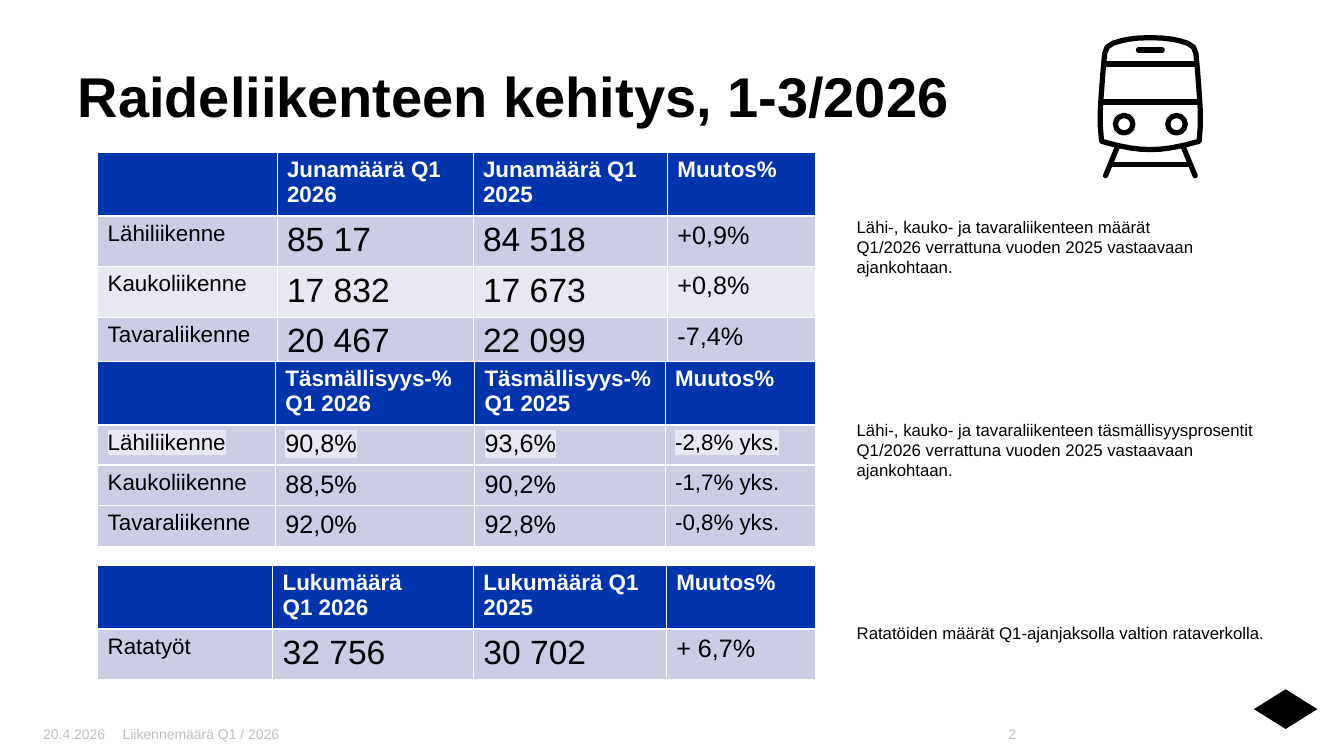
from pptx import Presentation
from pptx.dml.color import RGBColor
from pptx.enum.shapes import MSO_CONNECTOR as Link, MSO_SHAPE as Shape
from pptx.enum.text import MSO_ANCHOR as Anchor, PP_ALIGN as Align
from pptx.oxml.ns import qn
from pptx.util import Cm, Pt
from lxml.etree import SubElement as Sub

HUES = {"ink": "000000", "white": "FFFFFF", "head": "0034AC",
        "band": "CBCDE3", "pale": "E7E8F1", "foot": "BFBFBF"}
FACE = "Arial"

TABLES = [
    {"top": 3.84, "cols": (4.52, 4.94, 4.9, 3.74), "rows": (1.48, 1.2),
     "sizes": (16, 24, 24, 18), "thick": (0,), "pale": (2,), "mark": (),
     "data": [("", "Junamäärä Q1 2026", "Junamäärä Q1 2025", "Muutos%"),
              ("Lähiliikenne", "85 17", "84 518", "+0,9%"),
              ("Kaukoliikenne", "17 832", "17 673", "+0,8%"),
              ("Tavaraliikenne", "20 467", "22 099", "-7,4%")]},
    {"top": 9.1, "cols": (4.48, 5.02, 4.8, 3.8), "rows": (1.5, 0.97),
     "sizes": (16, 18, 18, 16), "thick": (0, 1), "pale": (), "mark": (1,),
     "data": [("", "Täsmällisyys-% Q1 2026", "Täsmällisyys-% Q1 2025", "Muutos%"),
              ("Lähiliikenne", "90,8%", "93,6%", "-2,8% yks."),
              ("Kaukoliikenne", "88,5%", "90,2%", "-1,7% yks."),
              ("Tavaraliikenne", "92,0%", "92,8%", "-0,8% yks.")]},
    {"top": 14.25, "cols": (4.41, 5.06, 4.86, 3.77), "rows": (1.52, 1.2),
     "sizes": (16, 24, 24, 18), "thick": (0,), "pale": (), "mark": (),
     "data": [("", "Lukumäärä\nQ1 2026", "Lukumäärä Q1 2025", "Muutos%"),
              ("Ratatyöt", "32 756", "30 702", "+ 6,7%")]},
]
NOTES = [
    "Lähi-, kauko- ja tavaraliikenteen määrät\n"
    "Q1/2026 verrattuna vuoden 2025 vastaavaan ajankohtaan.",
    "Lähi-, kauko- ja tavaraliikenteen täsmällisyysprosentit "
    "Q1/2026 verrattuna vuoden 2025 vastaavaan ajankohtaan.",
    "Ratatöiden määrät Q1-ajanjaksolla valtion rataverkolla.",
]
FOOT = [
    ("20.4.2026", 1.09, 2.29, Align.LEFT, (0, 0.25)),
    ("Liikennemäärä Q1 / 2026", 2.84, 20.27, Align.LEFT, (0.25, 0)),
    ("2", 23.22, 2.64, Align.RIGHT, (0, 0.25)),
]
AXIS = 28.99
BODY = [(0, 0.95), (0.3, 0.96), (0.56, 0.99), (0.74, 1.03), (0.94, 1.09),
        (1.09, 1.19), (1.15, 1.35), (1.19, 1.78), (1.24, 2.44), (1.26, 2.8),
        (1.26, 3.18), (1.23, 3.56), (0.86, 3.66), (0.5, 3.73), (0.25, 3.76),
        (0, 3.77)]
BARS = [(0.3, 1.26), (1.18, 1.61), (1.24, 2.57), (1, 4.15)]
LEG = (0.83, 3.7, 1.13, 4.43)
LAMP = (0.66, 3.13, 0.44)


def hue(name):
    return RGBColor.from_string(HUES[name])


def style(frame, size, color="ink", bold=False, align=Align.LEFT):
    for para in frame.paragraphs:
        para.alignment = align
        font = para.font
        font.name, font.size, font.bold = FACE, Pt(size), bold
        font.color.rgb = hue(color)


def write(slide, text, box, size, color="ink", bold=False, align=Align.LEFT,
          sides=(0.25, 0.25), ends=(0.13, 0.13), anchor=Anchor.TOP):
    frame = slide.shapes.add_textbox(*map(Cm, box)).text_frame
    frame.word_wrap = True
    frame.margin_left, frame.margin_right = map(Cm, sides)
    frame.margin_top, frame.margin_bottom = map(Cm, ends)
    frame.vertical_anchor = anchor
    frame.text = text
    style(frame, size, color, bold, align)


def edge(cell, side, width):
    props = cell._tc.get_or_add_tcPr()
    line = Sub(props, qn("a:ln" + side), w=str(Pt(width)))
    Sub(Sub(line, qn("a:solidFill")), qn("a:srgbClr"), val=HUES["white"])


def mark(cell):
    for run in cell.text_frame.paragraphs[0].runs:
        light = Sub(run._r.get_or_add_rPr(), qn("a:highlight"))
        Sub(light, qn("a:srgbClr"), val=HUES["pale"])


def grid(slide, item):
    data, cols = item["data"], item["cols"]
    first, other = item["rows"]
    highs = [first] + [other] * (len(data) - 1)
    box = (2.46, item["top"], sum(cols), sum(highs))
    table = slide.shapes.add_table(len(data), len(cols), *map(Cm, box)).table
    for col, width in zip(table.columns, cols):
        col.width = Cm(width)
    for r, texts in enumerate(data):
        table.rows[r].height = Cm(highs[r])
        fill = "head" if r == 0 else "pale" if r in item["pale"] else "band"
        for c, text in enumerate(texts):
            cell = table.cell(r, c)
            cell.text = text
            style(cell.text_frame, item["sizes"][c] if r else 16,
                  "ink" if r else "white", r == 0)
            for side, row in (("L", None), ("R", None), ("T", r - 1), ("B", r)):
                edge(cell, side, 1.53 if row in item["thick"] else 0.6)
            cell.fill.solid()
            cell.fill.fore_color.rgb = hue(fill)
            if r in item["mark"]:
                mark(cell)


def pen(shape):
    shape.line.color.rgb = hue("ink")
    shape.line.width = Pt(3.75)


def hollow(shape):
    shape.shadow.inherit = False
    shape.fill.background()
    pen(shape)


def stroke(slide, *ends, cap="flat"):
    line = slide.shapes.add_connector(Link.STRAIGHT, *map(Cm, ends))
    pen(line)
    line.line._get_or_add_ln().set("cap", cap)
    Sub(line._element.spPr, qn("a:effectLst"))


def train(slide):
    half = [(AXIS + x, y) for x, y in BODY]
    back = [(AXIS - x, y) for x, y in BODY[-2:0:-1]]
    points = [(Cm(x), Cm(y)) for x, y in half + back]
    form = slide.shapes.build_freeform(*points[0])
    form.add_line_segments(points[1:], close=True)
    hollow(form.convert_to_shape())
    for i, (x, y) in enumerate(BARS):
        stroke(slide, AXIS - x, y, AXIS + x, y, cap="flat" if i else "rnd")
    x1, y1, x2, y2 = LEG
    away, y, size = LAMP
    for sign in (-1, 1):
        stroke(slide, AXIS + sign * x1, y1, AXIS + sign * x2, y2, cap="rnd")
        box = (AXIS + sign * away - size / 2, y - size / 2, size, size)
        hollow(slide.shapes.add_shape(Shape.OVAL, *map(Cm, box)))


def main():
    deck = Presentation()
    deck.slide_width, deck.slide_height = Cm(33.87), Cm(19.05)
    slide = deck.slides.add_slide(deck.slide_layouts[6])
    badge = slide.shapes.add_shape(
        Shape.DIAMOND, *map(Cm, (31.6, 17.37, 1.6, 1)))
    badge.shadow.inherit = False
    badge.fill.solid()
    badge.fill.fore_color.rgb = hue("ink")
    badge.line.fill.background()
    write(slide, "Raideliikenteen kehitys, 1-3/2026", (1.96, 1.55, 25.4, 2),
          40, bold=True, sides=(0, 0.25), ends=(0, 0.13))
    for item in TABLES:
        grid(slide, item)
    for i, note in enumerate(NOTES):
        write(slide, note, (21.34, 5.33 + 5.12 * i, 11.3, 1.8), 12)
    for text, left, width, align, sides in FOOT:
        write(slide, text, (left, 18.16, width, 0.66), 10, "foot",
              align=align, sides=sides, anchor=Anchor.MIDDLE)
    train(slide)
    deck.save("out.pptx")


if __name__ == "__main__":
    main()
